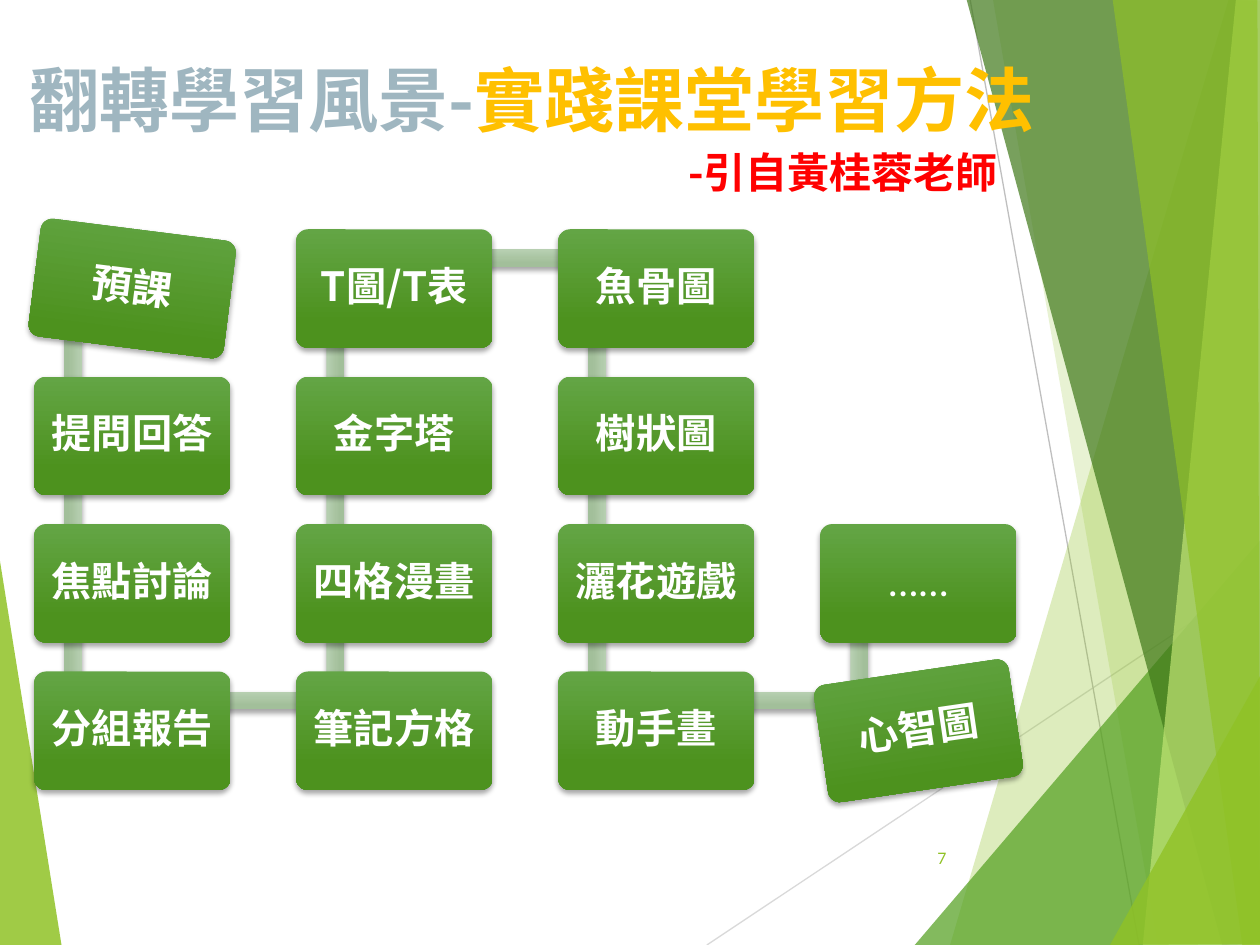
import pptx
import pptx.util
import pptx.dml.color
import pptx.enum.shapes
import pptx.enum.text
import pptx.oxml
import pptx.oxml.ns
from pptx.util import Inches

CJK, LATIN = "Noto Sans CJK SC", "Lato"
SHAPES = pptx.enum.shapes.MSO_SHAPE
ALIGN = pptx.enum.text.PP_ALIGN

# Facets of the backdrop: corner points, colour, opacity in percent
LEFT_FACET = ([(-0.01, 4.39), (0.49, 7.51), (-0.01, 7.5)], "90C226", 85)
RIGHT_FACETS = [
    ([(9.75, 0), (7.54, 7.5), (10.02, 7.51), (10.01, 0.01)], "90C226", 30),
    ([(7.88, -0.01), (9.19, 7.5), (10.01, 7.5), (10.01, -0.01)], "90C226", 20),
    ([(7.26, 7.5), (10, 4.29), (10.01, 7.5)], "54A021", 72),
    ([(7.67, -0.01), (9.7, 7.5), (10.01, 7.49), (10.01, -0.01)], "3F7819", 70),
    ([(9.81, -0.01), (9.07, 7.5), (10.01, 7.5), (10, -0.01)], "C0E474", 70),
    ([(8.83, -0.01), (9.86, 7.5), (10, 7.5), (9.98, -0.01)], "90C226", 65),
    ([(8.81, 7.5), (10.01, 5.35), (10.01, 7.49)], "90C226", 80),
]

# Learning methods in the order of the winding path: text, font, rotation
STEPS = [
    ("預課", CJK, 7.2), ("提問回答", CJK, 0), ("焦點討論", LATIN, 0), ("分組報告", LATIN, 0),
    ("筆記方格", CJK, 0), ("四格漫畫", CJK, 0), ("金字塔", CJK, 0), ("T圖/T表", CJK, 0),
    ("魚骨圖", CJK, 0), ("樹狀圖", CJK, 0), ("灑花遊戲", CJK, 0), ("動手畫", CJK, 0),
    ("心智圖", CJK, -8.4), ("……", LATIN, 0),
]
ROWS = 4
GRID_LEFT, GRID_TOP = 0.27, 1.82
STEP_X, STEP_Y = 2.08, 1.17
CARD_W, CARD_H = 1.56, 0.94
ANCHOR_X, ANCHOR_Y = 0.31, 0.23
BAR = 0.14


def rgb(value):
    return pptx.dml.color.RGBColor.from_string(value)


def add_xml(parent, tag, **attributes):
    child = pptx.oxml.parse_xml(f'<{tag} {pptx.oxml.ns.nsdecls("a")}/>')
    for name, value in attributes.items():
        child.set(name, str(value))
    parent.append(child)
    return child


def set_text(sp, parts, size, font, align=ALIGN.CENTER, bold=True):
    """Fill one paragraph with (text, colour) parts."""
    tf = sp.text_frame
    tf.word_wrap = True
    tf.auto_size = pptx.enum.text.MSO_AUTO_SIZE.NONE
    tf.vertical_anchor = pptx.enum.text.MSO_ANCHOR.MIDDLE
    p = tf.paragraphs[0]
    p.alignment = align
    for text, color in parts:
        r = p.add_run()
        r.text = text
        r.font.size = pptx.util.Pt(size)
        r.font.bold = bold
        r.font.name = font
        r.font.color.rgb = rgb(color)
        add_xml(r._r.get_or_add_rPr(), "a:ea", typeface=font)
    return p


def add_label(s, box, text, size, color, font, align=ALIGN.CENTER, bold=True):
    sp = s.shapes.add_textbox(*map(Inches, box))
    set_text(sp, [(text, color)], size, font, align, bold)


def add_facet(s, points, color, opacity):
    points = [(Inches(x), Inches(y)) for x, y in points]
    builder = s.shapes.build_freeform(*points[0])
    builder.add_line_segments(points[1:], close=True)
    sp = builder.convert_to_shape()
    sp.shadow.inherit = False
    sp.line.fill.background()
    sp.fill.solid()
    sp.fill.fore_color.rgb = rgb(color)
    clr = sp.element.spPr.find(".//" + pptx.oxml.ns.qn("a:srgbClr"))
    add_xml(clr, "a:alpha", val=opacity * 1000)


def add_thin_line(s, start, end, color):
    line = s.shapes.add_connector(pptx.enum.shapes.MSO_CONNECTOR.STRAIGHT,
                                  *map(Inches, start + end))
    line.line.color.rgb = rgb(color)
    line.line.width = pptx.util.Pt(0.75)
    add_xml(line.element.spPr, "a:effectLst")


def add_soft_shadow(sp):
    effects = add_xml(sp.element.spPr, "a:effectLst")
    shadow = add_xml(effects, "a:outerShdw", blurRad=pptx.util.Pt(3), dist=pptx.util.Pt(2),
                     dir=90 * 60000, rotWithShape=0)
    clr = add_xml(shadow, "a:srgbClr", val="000000")
    add_xml(clr, "a:alpha", val=35000)


def add_gradient_shape(s, kind, box, colors, rotation=0):
    sp = s.shapes.add_shape(kind, *map(Inches, box))
    sp.rotation = rotation
    sp.line.fill.background()
    sp.fill.gradient()
    sp.fill.gradient_angle = 270
    for stop, color, position in zip(sp.fill.gradient_stops, colors, (0, 0.78)):
        stop.color.rgb = rgb(color)
        stop.position = position
    add_soft_shadow(sp)
    return sp


def card_position(i):
    """Columns run down and up in turn."""
    col, row = divmod(i, ROWS)
    if col % 2:
        row = ROWS - 1 - row
    return GRID_LEFT + col * STEP_X, GRID_TOP + row * STEP_Y


def add_bar(s, i):
    (x1, y1), (x2, y2) = card_position(i), card_position(i + 1)
    length = abs(x2 - x1) + abs(y2 - y1)
    cx, cy = (x1 + x2) / 2 + ANCHOR_X, (y1 + y2) / 2 + ANCHOR_Y
    rotation = 0 if x1 != x2 else 90 if y2 > y1 else 270
    add_gradient_shape(s, SHAPES.RECTANGLE, (cx - length / 2, cy - BAR / 2, length, BAR),
                       ("B7CFB1", "A2BF9A"), rotation)


def add_card(s, i, text, font, rotation):
    sp = add_gradient_shape(s, SHAPES.ROUNDED_RECTANGLE, (*card_position(i), CARD_W, CARD_H),
                            ("63A545", "4D921E"), rotation)
    sp.adjustments[0] = 0.1
    tf = sp.text_frame
    # The rounded corners add a little to these margins
    tf.margin_left = tf.margin_right = Inches(0.09)
    tf.margin_top = tf.margin_bottom = Inches(0.1)
    p = set_text(sp, [(text, "FFFFFF")], 23, font, bold=text != "……")
    p.line_spacing = 0.9


def add_title(s):
    title = s.shapes.title
    title.left, title.top, title.width, title.height = map(Inches, (-0.28, 0.29, 9, 0.98))
    set_text(title, [("翻轉學習風景-", "9FB6C0"), ("實踐課堂學習方法", "FFC000")], 40, CJK)
    # Bring the title in front of the backdrop
    title.element.getparent().append(title.element)


def main():
    prs = pptx.Presentation()
    prs.slide_width, prs.slide_height = Inches(10), Inches(7.5)
    s = prs.slides.add_slide(prs.slide_layouts[5])

    # Backdrop
    add_facet(s, *LEFT_FACET)
    add_thin_line(s, (5.61, 7.5), (10.01, 4.57), "D9D9D9")
    add_thin_line(s, (7.7, 0), (9.04, 7.5), "BFBFBF")
    for facet in RIGHT_FACETS:
        add_facet(s, *facet)

    # Slide number and title
    add_label(s, (7.05, 6.61, 0.56, 0.4), "7", 9, "90C226", LATIN, ALIGN.RIGHT, False)
    add_title(s)

    # Winding path of methods
    for i, step in enumerate(STEPS):
        if i < len(STEPS) - 1:
            add_bar(s, i)
        add_card(s, i, *step)

    # Credit line
    add_label(s, (4.84, 0.99, 3.7, 0.74), "-引自黃桂蓉老師", 24, "FF0000", CJK)
    prs.save("out.pptx")


if __name__ == "__main__":
    main()
